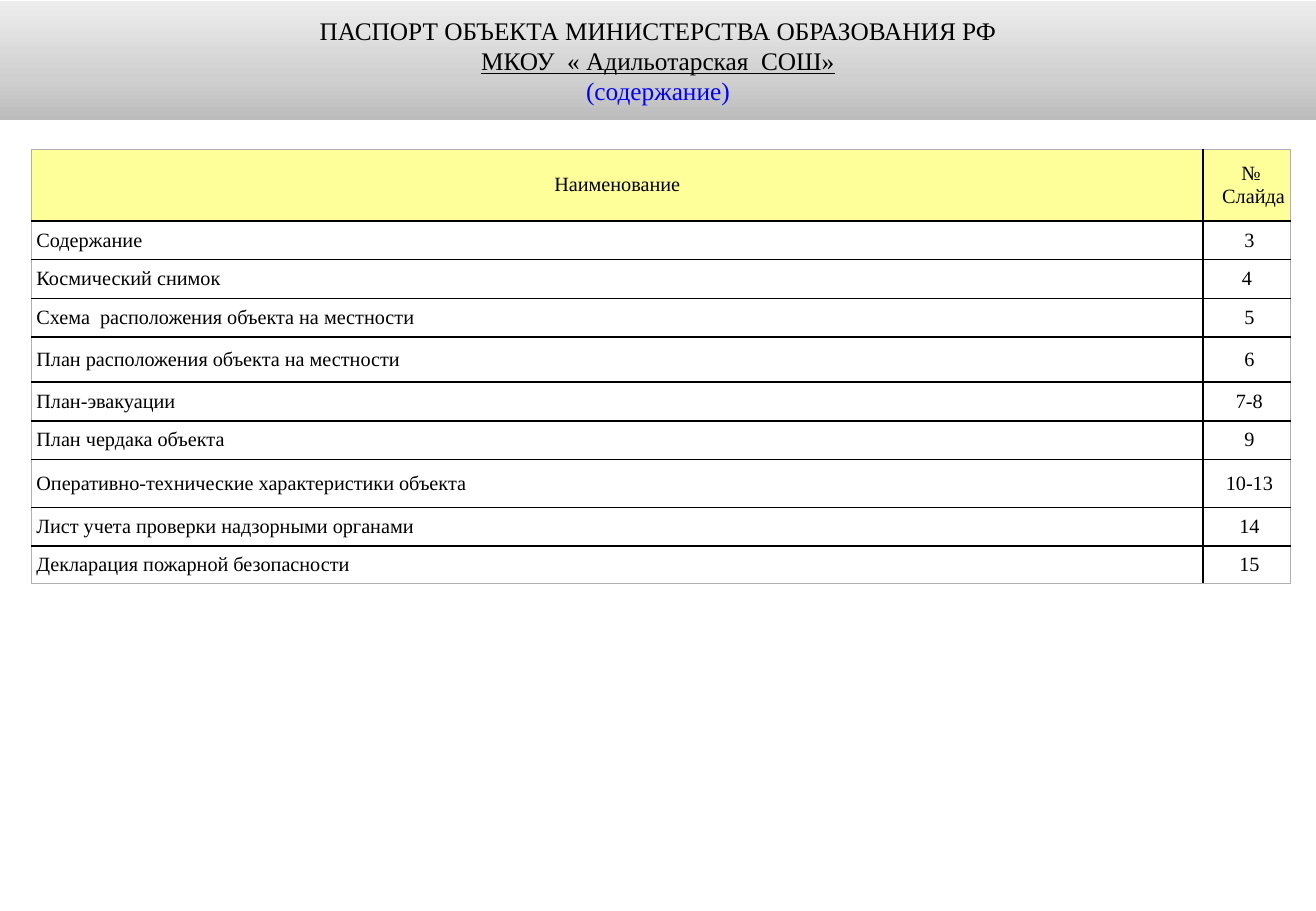
from copy import deepcopy

from lxml.etree import SubElement
from pptx import Presentation
from pptx.dml.color import RGBColor
from pptx.enum.shapes import MSO_SHAPE
from pptx.enum.text import MSO_ANCHOR as Anchor, PP_ALIGN as Align
from pptx.oxml import parse_xml
from pptx.oxml.ns import nsdecls, qn
from pptx.util import Cm, Pt

BLACK = RGBColor(0x00, 0x00, 0x00)
BLUE = RGBColor(0x00, 0x00, 0xFF)
YELLOW = RGBColor(0xFF, 0xFF, 0x99)
EDGE_GREY = RGBColor(0xB0, 0xB0, 0xB0)
BAND_STOPS = [
    (0, RGBColor(0xBC, 0xBC, 0xBC)),
    (0.35, RGBColor(0xD0, 0xD0, 0xD0)),
    (1, RGBColor(0xED, 0xED, 0xED)),
]
FONT = "Times New Roman"

SLIDE_W, SLIDE_H = Cm(27.51), Cm(19.05)
NUMBER_W = Cm(1.83)
ROW_H = Cm(0.81)

TITLE = [
    ("ПАСПОРТ ОБЪЕКТА МИНИСТЕРСТВА ОБРАЗОВАНИЯ РФ", BLACK, False),
    ("МКОУ  « Адильотарская  СОШ»", BLACK, True),
    ("(содержание)", BLUE, False),
]
HEADINGS = ("Наименование", ["№ ", "Слайда"], Cm(1.5))
CONTENTS = [
    ("Содержание", " 3", ROW_H),
    ("Космический снимок", "4", ROW_H),
    ("Схема  расположения объекта на местности", " 5", ROW_H),
    ("План расположения объекта на местности", " 6", Cm(0.94)),
    ("План-эвакуации", " 7-8", ROW_H),
    ("План чердака объекта", " 9", ROW_H),
    ("Оперативно-технические характеристики объекта", " 10-13", Cm(1)),
    ("Лист учета проверки надзорными органами", " 14", ROW_H),
    ("Декларация пожарной безопасности", " 15", Cm(0.79)),
]


def add_line(frame, index, text, size, align, color=BLACK, underline=False, indent=0):
    """Write one paragraph; the first one is already in the frame."""
    line = frame.paragraphs[0] if index == 0 else frame.add_paragraph()
    line.alignment = align
    properties = line._p.get_or_add_pPr()
    properties.set("marL", str(indent))
    properties.set("indent", "0")
    run = line.add_run()
    run.text = text
    run.font.name = FONT
    run.font.size = Pt(size)
    run.font.color.rgb = color
    run.font.underline = underline


def add_title_band(slide, left, top, width, height):
    band = slide.shapes.add_shape(MSO_SHAPE.RECTANGLE, left, top, width, height)
    band.shadow.inherit = False
    band.line.fill.background()
    band.fill.gradient()
    band.fill.gradient_angle = 90
    stop_list = band._element.spPr.find(".//" + qn("a:gsLst"))
    stop_list.append(deepcopy(stop_list[0]))
    for stop, (position, color) in zip(band.fill.gradient_stops, BAND_STOPS):
        stop.position = position
        stop.color.rgb = color
    frame = band.text_frame
    frame.word_wrap = True
    frame.vertical_anchor = Anchor.MIDDLE
    for index, (text, color, underline) in enumerate(TITLE):
        add_line(frame, index, text, 15, Align.CENTER, color, underline)


def set_borders(cell, edges):
    """Draw grey hairlines on the named outer edges and black lines elsewhere."""
    properties = cell._tc.get_or_add_tcPr()
    for place, side in enumerate("LRTB"):
        color, width = (EDGE_GREY, Pt(0.75)) if side in edges else (BLACK, Pt(1))
        border = parse_xml(f'<a:ln{side} {nsdecls("a")} w="{width}"/>')
        fill = SubElement(border, qn("a:solidFill"))
        SubElement(fill, qn("a:srgbClr"), val=str(color))
        properties.insert(place, border)


def fill_cell(cell, lines, align, indent, edges, color=None):
    cell.margin_left = cell.margin_right = cell.margin_top = cell.margin_bottom = 0
    cell.vertical_anchor = Anchor.MIDDLE
    if color is None:
        cell.fill.background()
    else:
        cell.fill.solid()
        cell.fill.fore_color.rgb = color
    set_borders(cell, edges)
    for index, text in enumerate(lines):
        add_line(cell.text_frame, index, text, 12, align, indent=indent)


def add_contents_table(slide, left, top, width):
    rows = [HEADINGS] + CONTENTS
    height = sum(row_height for _, _, row_height in rows)
    table = slide.shapes.add_table(len(rows), 2, left, top, width, height).table
    table.first_row = table.horz_banding = False
    table.columns[0].width = width - NUMBER_W
    table.columns[1].width = NUMBER_W
    for index, (name, number, row_height) in enumerate(rows):
        table.rows[index].height = row_height
        edges = {0: "T", len(rows) - 1: "B"}.get(index, "")
        name_cell, number_cell = table.cell(index, 0), table.cell(index, 1)
        if index == 0:
            fill_cell(name_cell, [name], Align.CENTER, 0, edges + "L", YELLOW)
            fill_cell(number_cell, number, Align.CENTER, Cm(0.28), edges + "R", YELLOW)
        else:
            fill_cell(name_cell, [name], Align.LEFT, Cm(0.1), edges + "L")
            fill_cell(number_cell, [number], Align.CENTER, 0, edges + "R")


def main():
    deck = Presentation()
    deck.slide_width, deck.slide_height = SLIDE_W, SLIDE_H
    slide = deck.slides.add_slide(deck.slide_layouts[6])
    add_title_band(slide, 0, Cm(0.02), SLIDE_W, Cm(2.49))
    add_contents_table(slide, Cm(0.66), Cm(3.12), Cm(26.32))
    deck.save("out.pptx")


if __name__ == "__main__":
    main()
